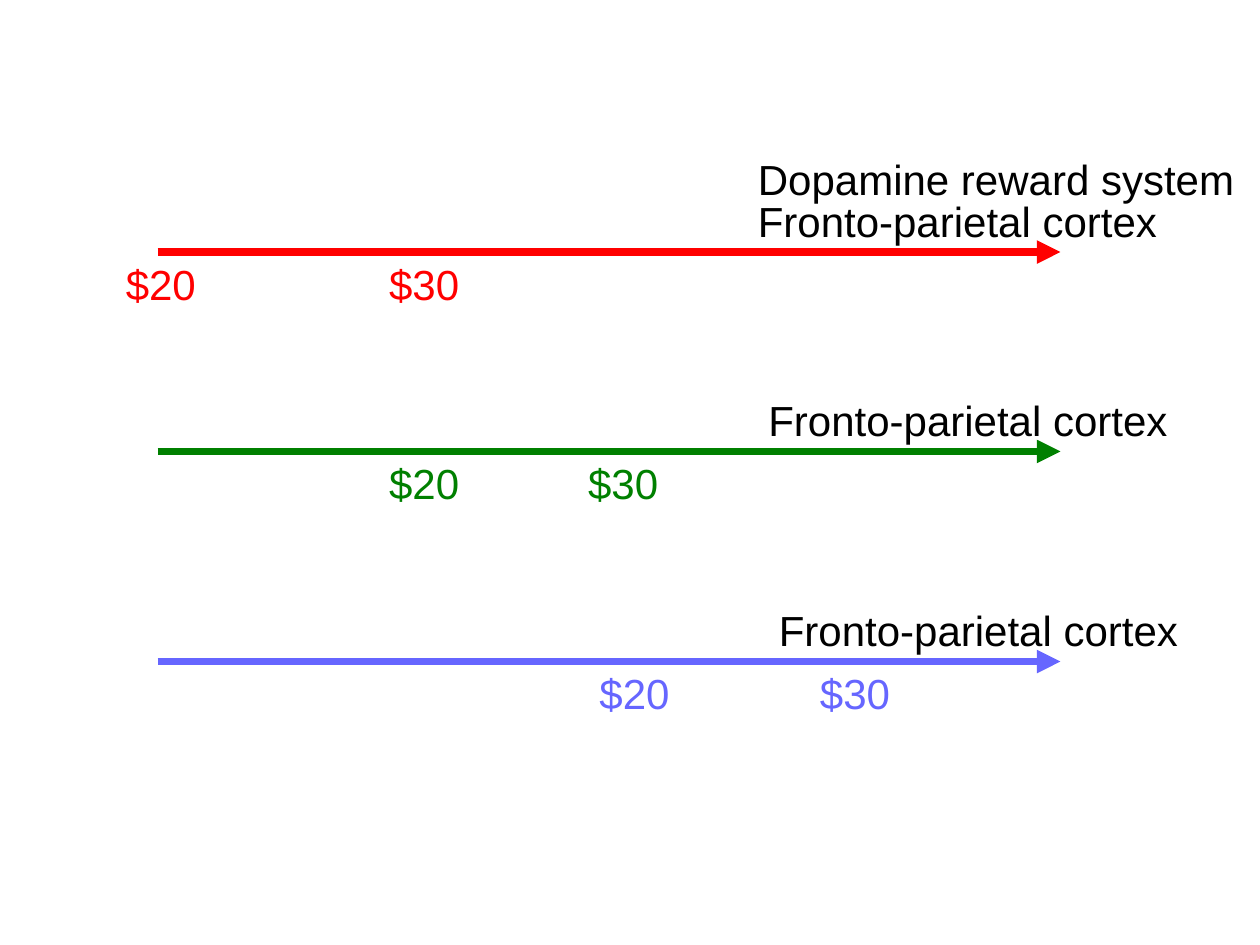
from dataclasses import dataclass

from lxml.etree import SubElement
from pptx import Presentation
from pptx.dml.color import RGBColor
from pptx.enum.shapes import MSO_CONNECTOR
from pptx.enum.text import MSO_AUTO_SIZE
from pptx.oxml.ns import qn
from pptx.slide import Slide
from pptx.util import Pt

AXIS_LEFT = 90
AXIS_RIGHT = 606
TEXT_HEIGHT = 36
AMOUNT_WIDTH = 54.7
CORTEX_WIDTH = 242.6
REWARD_WIDTH = 289.4


@dataclass(frozen=True)
class Timeline:
    top: float
    color: str
    twenty_left: float
    thirty_left: float
    cortex_left: float


TIMELINES = [
    Timeline(144, "FF0000", 64.8, 215.3, 426),
    Timeline(258, "008000", 215.3, 329, 432),
    Timeline(378, "6666FF", 335.5, 461.5, 438),
]


def rgb(color: str) -> RGBColor:
    return RGBColor.from_string(color)


def add_text(page: Slide, text: str, *, left: float, top: float, width: float,
             color: str = "000000", size: float = 24, font: str = "Arial") -> None:
    box = page.shapes.add_textbox(Pt(left), Pt(top), Pt(width), Pt(TEXT_HEIGHT))
    frame = box.text_frame
    frame.word_wrap = False
    frame.auto_size = MSO_AUTO_SIZE.SHAPE_TO_FIT_TEXT
    span = frame.paragraphs[0].add_run()
    span.text = text
    span.font.name = font
    span.font.size = Pt(size)
    span.font.color.rgb = rgb(color)


def add_arrow(page: Slide, top: float, color: str) -> None:
    arrow = page.shapes.add_connector(
        MSO_CONNECTOR.STRAIGHT, Pt(AXIS_LEFT), Pt(top), Pt(AXIS_RIGHT), Pt(top))
    arrow.line.color.rgb = rgb(color)
    arrow.line.width = Pt(4.5)
    SubElement(arrow.line._get_or_add_ln(), qn("a:tailEnd"), type="triangle")
    SubElement(arrow._element.spPr, qn("a:effectLst"))


def add_timeline(page: Slide, timeline: Timeline) -> None:
    add_arrow(page, timeline.top, timeline.color)
    amounts = [("$20", timeline.twenty_left), ("$30", timeline.thirty_left)]
    for amount, left in amounts:
        add_text(page, amount, left=left, top=timeline.top,
                 width=AMOUNT_WIDTH, color=timeline.color)
    add_text(page, "Fronto-parietal cortex", left=timeline.cortex_left,
             top=timeline.top - TEXT_HEIGHT, width=CORTEX_WIDTH)


def main() -> None:
    deck = Presentation()
    deck.slide_width = Pt(720)
    deck.slide_height = Pt(540)
    page = deck.slides.add_slide(deck.slide_layouts[6])
    for timeline in TIMELINES:
        add_timeline(page, timeline)
    add_text(page, "Dopamine reward system", left=TIMELINES[0].cortex_left,
             top=84, width=REWARD_WIDTH)
    deck.save("out.pptx")


if __name__ == "__main__":
    main()
